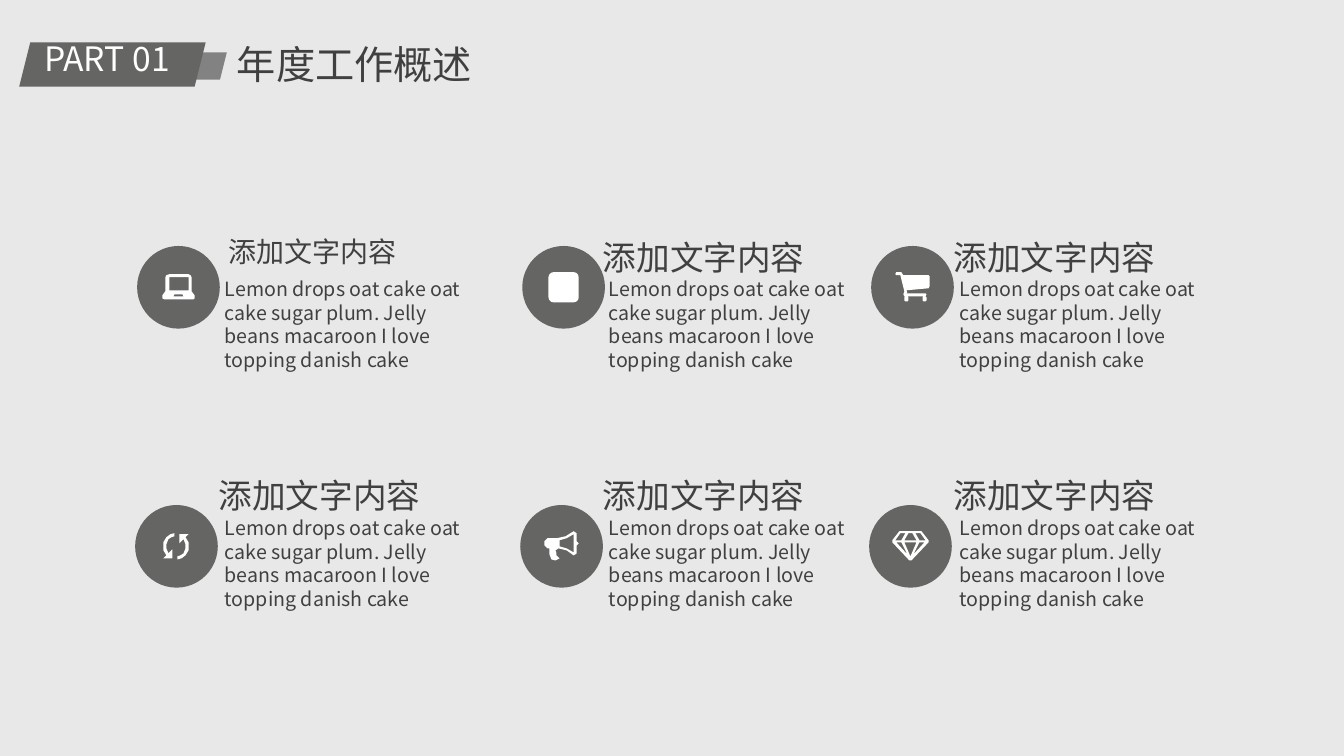
from pptx import Presentation
from pptx.dml.color import RGBColor
from pptx.enum.shapes import MSO_SHAPE
from pptx.enum.text import MSO_ANCHOR, MSO_AUTO_SIZE, PP_ALIGN
from pptx.util import Inches, Pt

PARALLELOGRAM = MSO_SHAPE.PARALLELOGRAM
OVAL = MSO_SHAPE.OVAL
ROUNDED = MSO_SHAPE.ROUNDED_RECTANGLE
TOP = MSO_ANCHOR.TOP
LEFT = PP_ALIGN.LEFT
NO_AUTOFIT = MSO_AUTO_SIZE.NONE

FONT = "Noto Sans CJK SC"
BACKGROUND = RGBColor(0xE8, 0xE8, 0xE8)
DARK_GREY = RGBColor(0x65, 0x65, 0x64)
MID_GREY = RGBColor(0x82, 0x82, 0x82)
TEXT_GREY = RGBColor(0x40, 0x40, 0x40)
WHITE = RGBColor(0xFF, 0xFF, 0xFF)

HEADING = "添加文字内容"
BODY = ("Lemon drops oat cake oat cake sugar plum. Jelly beans macaroon "
        "I love topping danish cake")

# Icon contours, in hundredths of an inch from the corner of their circle
LAPTOP = [
    [(57, 49), (54, 45), (54, 31), (53, 29), (51, 28), (32, 28), (29, 29),
     (28, 31), (28, 45), (25, 49), (25, 52), (27, 53), (56, 53), (57, 52)],
    [(51, 44), (32, 44), (32, 31), (51, 31)],
    [(36, 50), (37, 48), (45, 48), (46, 50)],
]
WHEEL = [(52, 50), (54, 50), (55, 51), (55, 54),
         (54, 55), (52, 55), (51, 54), (51, 51)]
CART = [
    [(58, 40), (57, 42), (35, 44), (36, 46), (35, 47), (54, 47), (55, 48),
     (54, 50), (33, 50), (32, 48), (33, 45), (29, 29), (25, 29), (24, 28),
     (25, 26), (30, 26), (32, 29), (57, 29), (58, 30)],
    WHEEL,
    [(x - 18, y) for x, y in WHEEL],
]
ARROW = [(44, 29), (44, 38), (48, 34), (50, 39), (50, 43), (48, 48), (45, 50),
         (42, 51), (42, 54), (46, 53), (50, 50), (53, 45), (53, 37), (50, 32),
         (53, 29)]
REFRESH = [ARROW, [(81 - x, 82 - y) for x, y in ARROW]]
MEGAPHONE = [
    [(58, 38), (56, 40), (56, 48), (53, 50), (46, 45), (38, 43), (35, 45),
     (36, 48), (36, 50), (39, 53), (35, 55), (31, 54), (29, 49), (29, 43),
     (27, 43), (24, 40), (24, 36), (27, 33), (36, 33), (45, 31), (53, 26),
     (56, 28), (56, 36)],
    [(53, 29), (46, 33), (39, 35), (39, 41), (46, 43), (53, 47)],
]
DIAMOND = [
    [(59, 35), (59, 37), (42, 55), (40, 55), (23, 37), (23, 35), (30, 26),
     (52, 26)],
    [(56, 35), (51, 28), (46, 28), (50, 35)],
    [(55, 37), (50, 37), (44, 49)],
    [(47, 35), (43, 28), (39, 28), (35, 35)],
    [(47, 37), (35, 37), (41, 51)],
    [(38, 49), (32, 37), (27, 37)],
    [(36, 28), (31, 28), (26, 35), (32, 35)],
]

# Columns: circle, heading and body left; rows: circle, heading and body top
COLUMNS = [(1.36, 1.99, 2.23), (5.18, 5.8, 6.04), (8.64, 9.28, 9.52)]
ROWS = [(2.44, 2.3, 2.75), (5.01, 4.66, 5.12)]
ROW_SHIFT = 0.02  # circles of the second row sit slightly further left
ICONS = [[LAPTOP, None, CART], [REFRESH, MEGAPHONE, DIAMOND]]


def paint(sp, color):
    sp.shadow.inherit = False
    sp.fill.solid()
    sp.fill.fore_color.rgb = color
    sp.line.fill.background()


def add_block(slide, kind, left, top, width, height, color):
    sp = slide.shapes.add_shape(kind, Inches(left), Inches(top),
                                Inches(width), Inches(height))
    paint(sp, color)


def add_icon(slide, contours, left, top):
    builder = None
    for start, *rest in contours:
        if builder is None:
            builder = slide.shapes.build_freeform(*start, scale=Inches(0.01))
        else:
            builder.move_to(*start)
        builder.add_line_segments(rest, close=True)
    paint(builder.convert_to_shape(Inches(left), Inches(top)), WHITE)


def write(tf, text, size, color):
    tf.word_wrap = True
    tf.auto_size = NO_AUTOFIT
    tf.vertical_anchor = TOP
    p = tf.paragraphs[0]
    p.alignment = LEFT
    r = p.add_run()
    r.text = text
    r.font.size = Pt(size)
    r.font.name = FONT
    r.font.color.rgb = color


def add_text(slide, text, left, top, width, height, size, color=TEXT_GREY):
    sp = slide.shapes.add_textbox(Inches(left), Inches(top),
                                  Inches(width), Inches(height))
    write(sp.text_frame, text, size, color)
    return sp.text_frame


def add_header(slide):
    add_block(slide, PARALLELOGRAM, 1.71, 0.52, 0.54, 0.27, MID_GREY)
    add_block(slide, PARALLELOGRAM, 0.19, 0.42, 1.85, 0.44, DARK_GREY)
    add_text(slide, "PART 01", 0.34, 0.33, 1.54, 0.5, 24, WHITE)
    title = slide.shapes.title
    title.left, title.top = Inches(2.25), Inches(0.35)
    title.width, title.height = Inches(3.82), Inches(0.57)
    write(title.text_frame, "年度工作概述", 28, TEXT_GREY)


def add_badge(slide, icon, left, top):
    add_block(slide, OVAL, left, top, 0.82, 0.82, DARK_GREY)
    if icon:
        add_icon(slide, icon, left, top)
    else:
        add_block(slide, ROUNDED, left + 0.26, top + 0.26, 0.3, 0.3, WHITE)


def add_heading(slide, left, top, is_first):
    if is_first:
        add_text(slide, HEADING, 2.17, 2.28, 2.23, 0.43, 20)
    else:
        tf = add_text(slide, HEADING, left, top, 2.7, 0.5, 24)
        tf.margin_left = Inches(0.18)


def add_body(slide, left, top):
    tf = add_text(slide, BODY, left, top, 2.46, 1.07, 14)
    tf.margin_left = tf.margin_right = 0
    tf.margin_top = tf.margin_bottom = 0


def main():
    prs = Presentation()
    prs.slide_width, prs.slide_height = Inches(13.33), Inches(7.5)
    slide = prs.slides.add_slide(prs.slide_layouts[5])
    slide.background.fill.solid()
    slide.background.fill.fore_color.rgb = BACKGROUND

    # Section tag and title
    add_header(slide)

    # Grid of six items
    for row, (circle_top, heading_top, body_top) in enumerate(ROWS):
        for col, (circle_left, heading_left, body_left) in enumerate(COLUMNS):
            add_badge(slide, ICONS[row][col],
                      circle_left - row * ROW_SHIFT, circle_top)
            add_heading(slide, heading_left, heading_top, row == col == 0)
            add_body(slide, body_left, body_top)

    prs.save("out.pptx")


if __name__ == "__main__":
    main()
